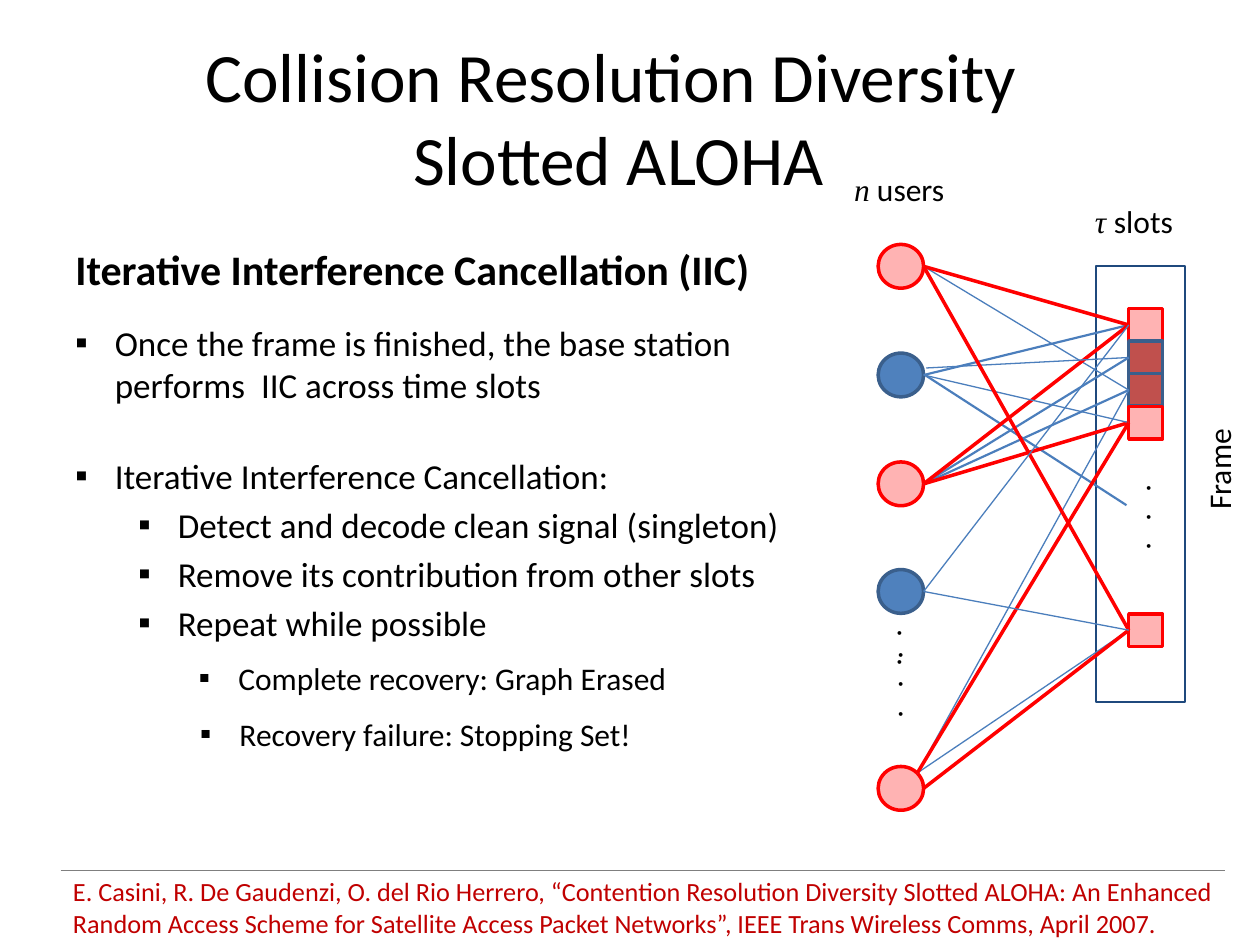
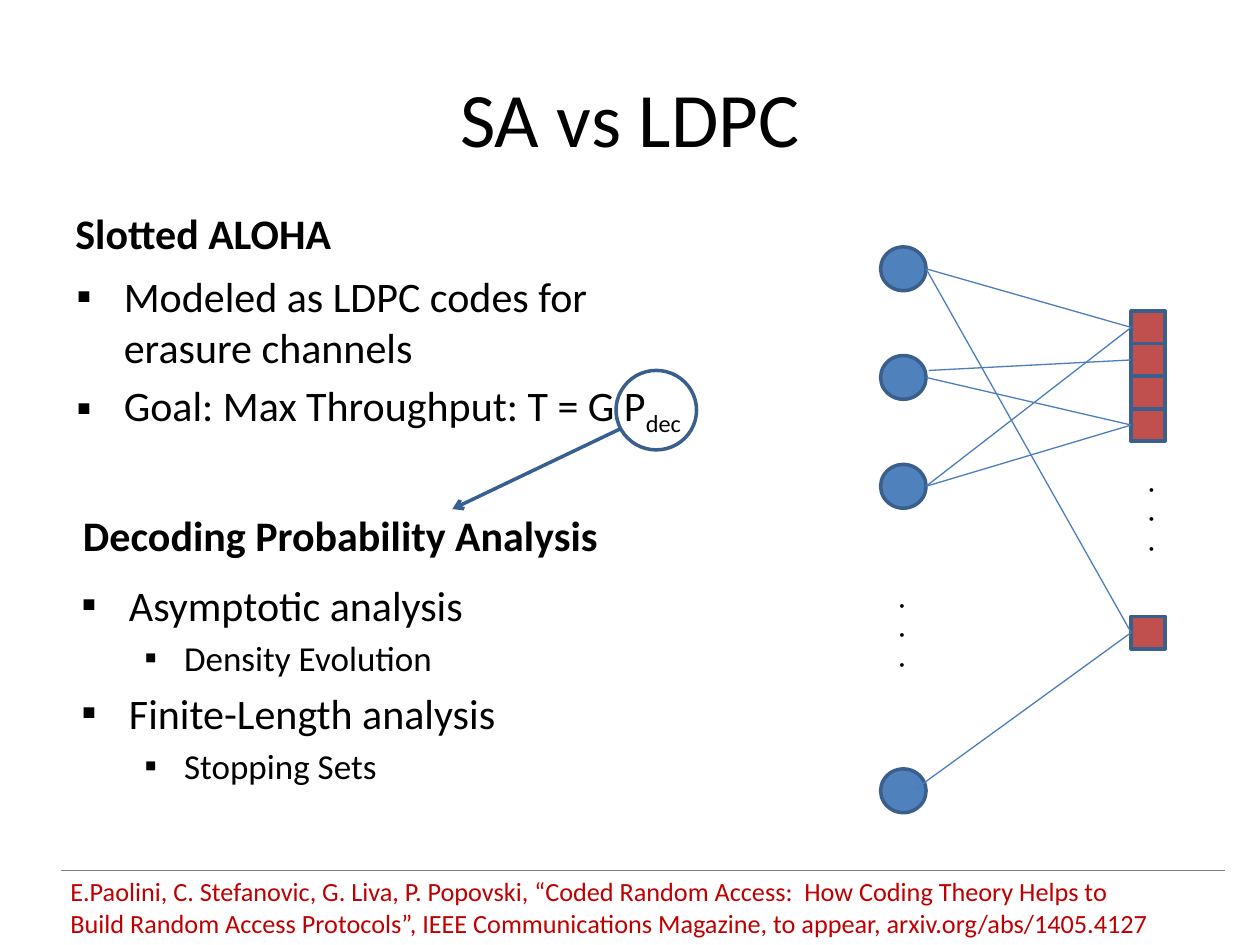
from pptx import Presentation
from pptx.dml.color import RGBColor
from pptx.enum.shapes import MSO_CONNECTOR, MSO_SHAPE
from pptx.enum.text import MSO_ANCHOR, PP_ALIGN
from pptx.oxml.ns import qn
from pptx.util import Pt
from lxml.etree import SubElement

# Colours
BLACK = RGBColor(0x00, 0x00, 0x00)
BLUE = RGBColor(0x4F, 0x81, 0xBD)
EDGE = RGBColor(0x3A, 0x5F, 0x8C)
LINK = RGBColor(0x4B, 0x7E, 0xBC)
NAVY = RGBColor(0x1F, 0x49, 0x7D)
ARROW = RGBColor(0x37, 0x60, 0x92)
BRICK = RGBColor(0xC0, 0x50, 0x4D)
RED = RGBColor(0xFF, 0x00, 0x00)
PINK = RGBColor(0xFF, 0xB3, 0xB3)
WINE = RGBColor(0xC0, 0x00, 0x00)
GREY = RGBColor(0x7F, 0x7F, 0x7F)

FONT, SERIF = "Calibri", "Times New Roman"

# Graph grid, in points
USER_X, USER_W, USER_H = 501.8, 26, 25
USER_Y = {1: 139.7, 2: 201.8, 3: 264, 4: 325.5, 5: 438}
SLOT_X, SLOT_W, SLOT_H = 645, 19.4, 18.6
SLOT_Y = {n: 176.4 + (n - 1) * SLOT_H for n in range(1, 5)} | {5: 350.8}


def write(par, text, size=18, color=BLACK, font=FONT, bold=False,
          italic=False, sub=False, gap=None):
    """Add text to a paragraph; a newline becomes a line break."""
    for num, part in enumerate(text.split("\n")):
        if num:
            par.add_line_break()
        run = par.add_run()
        run.text = part
        face = run.font
        face.name, face.size, face.bold, face.italic = font, Pt(size), bold, italic
        face.color.rgb = color
        props = run._r.get_or_add_rPr()
        if sub:
            props.set("baseline", "-25000")
        if gap:
            props.set("spc", str(int(gap * 100)))


class Deck:
    def __init__(self):
        self.prs = Presentation()
        self.prs.slide_width, self.prs.slide_height = Pt(720), Pt(540)
        self.page = None

    def start(self, title, left, size, note, note_x, note_w):
        """Open a slide with its title, footer rule and citation."""
        self.page = self.prs.slides.add_slide(self.prs.slide_layouts[6])
        frame = self.frame(left, 21.6, 648, 90, MSO_ANCHOR.MIDDLE)
        par = frame.paragraphs[0]
        par.alignment = PP_ALIGN.CENTER
        write(par, title, size=size)
        self.line(34.6, 497.5, 699.8, 497.5, GREY, 0.75)
        cite = self.frame(note_x, 496.8, note_w, 44)
        write(cite.paragraphs[0], note, size=15, color=WINE)

    def frame(self, x, y, w, h, anchor=MSO_ANCHOR.TOP, wrap=True, turn=0):
        box = self.page.shapes.add_textbox(Pt(x), Pt(y), Pt(w), Pt(h))
        box.rotation = turn
        frame = box.text_frame
        frame.word_wrap, frame.vertical_anchor = wrap, anchor
        return frame

    def label(self, x, y, w, h, *parts, turn=0):
        par = self.frame(x, y, w, h, wrap=False, turn=turn).paragraphs[0]
        for text, style in parts:
            write(par, text, **style)

    def dots(self, x, y):
        self.label(x, y, 58.3, 33, (". . .", {"gap": 4.05}), turn=90)

    def head(self, text, x, y, w):
        par = self.frame(x, y, w, 50.4, MSO_ANCHOR.BOTTOM).paragraphs[0]
        write(par, text, size=24, bold=True)

    def bullets(self, x, y, w, h, items, anchor=MSO_ANCHOR.TOP):
        """Items are (text, size, margin, hang, space before)."""
        frame = self.frame(x, y, w, h, anchor)
        for num, (text, size, margin, hang, space) in enumerate(items):
            par = frame.add_paragraph() if num else frame.paragraphs[0]
            par.space_before = Pt(space)
            props = par._p.get_or_add_pPr()
            props.set("marL", str(Pt(margin)))
            props.set("indent", str(-Pt(hang)))
            SubElement(props, qn("a:buFont")).set("typeface", FONT)
            SubElement(props, qn("a:buChar")).set("char", "▪")
            write(par, text, size=size)
        return frame

    def shape(self, kind, x, y, w, h, fill=None, edge=EDGE, width=2):
        item = self.page.shapes.add_shape(kind, Pt(x), Pt(y), Pt(w), Pt(h))
        item.shadow.inherit = False
        if fill is None:
            item.fill.background()
        else:
            item.fill.solid()
            item.fill.fore_color.rgb = fill
        item.line.color.rgb, item.line.width = edge, Pt(width)
        return item

    def line(self, x1, y1, x2, y2, color, width, slot=None, arrow=False):
        link = self.page.shapes.add_connector(
            MSO_CONNECTOR.STRAIGHT, Pt(x1), Pt(y1), Pt(x2), Pt(y2))
        link.line.color.rgb, link.line.width = color, Pt(width)
        if arrow:
            SubElement(link.line._get_or_add_ln(), qn("a:tailEnd")).set("type", "arrow")
        SubElement(link._element.spPr, qn("a:effectLst"))
        if slot is not None:
            link.end_connect(slot, 1)

    def graph(self, users, slots, links, shift=0, hot=((), ())):
        """Draw users, slots and links; the hot ones are red."""
        def paint(lit, base):
            return (PINK, RED) if lit else (base, EDGE)

        for n in users:
            self.shape(MSO_SHAPE.OVAL, USER_X + shift, USER_Y[n] + shift,
                       USER_W, USER_H, *paint(n in hot[0], BLUE))
        boxes = {n: self.shape(MSO_SHAPE.RECTANGLE, SLOT_X + shift, SLOT_Y[n] + shift,
                               SLOT_W, SLOT_H, *paint(n in hot[1], BRICK))
                 for n in slots}
        for user, slot, color, width, *move in links:
            dx, dy = move or (0, 0)
            self.line(USER_X + USER_W + shift + dx,
                      USER_Y[user] + USER_H / 2 + shift + dy,
                      SLOT_X + shift, SLOT_Y[slot] + SLOT_H / 2 + shift,
                      color, width, boxes[slot])


def cancel(deck):
    deck.start("Collision Resolution Diversity \nSlotted ALOHA", 29.5, 39.6,
               "E. Casini, R. De Gaudenzi, O. del Rio Herrero, “Contention Resolution "
               "Diversity Slotted ALOHA: An Enhanced Random Access Scheme for Satellite "
               "Access Packet Networks”, IEEE Trans Wireless Comms, April 2007.",
               34.6, 682.6)
    deck.head("Iterative Interference Cancellation (IIC)", 36, 121, 414.7)
    deck.bullets(36, 180, 454.3, 220.3, [
        ("Once the frame is finished, the base station performs  IIC across time slots",
         20, 22.5, 22.5, 4),
        ("Iterative Interference Cancellation:", 20, 22.5, 22.5, 28),
        ("Detect and decode clean signal (singleton)", 20, 58.5, 22.5, 4),
        ("Remove its contribution from other slots", 20, 58.5, 22.5, 4),
        ("Repeat while possible", 20, 58.5, 22.5, 4)])
    for text, x, y in (("Complete recovery: Graph Erased", 34.6, 360),
                       ("Recovery failure: Stopping Set!", 35.3, 391.7)):
        deck.bullets(x, y, 657.4, 41.8, [(text, 18, 94.5, 22.5, 3.6)],
                     MSO_ANCHOR.BOTTOM)

    # Frame of slots and labels
    deck.shape(MSO_SHAPE.RECTANGLE, 626.4, 152, 51, 249, edge=NAVY, width=1.25)
    math = {"font": SERIF, "italic": True}
    deck.label(481, 93.6, 69, 29, ("n", math), (" users", {}))
    deck.label(618.5, 111.6, 60, 29, ("τ ", math), ("slots", {}))
    deck.label(666, 253.4, 61, 29, ("Frame", {}), turn=270)
    for x, y in ((489, 348.5), (489.6, 378), (631.4, 282.2)):
        deck.dots(x, y)

    # Graph with the recovered part in red
    deck.line(527.8, 213.8, 643.7, 288.7, LINK, 1.25)
    thin, mid, hot = (LINK, 0.75), (LINK, 1.25), (RED, 2)
    low = (-3.6, -8.8)
    deck.graph(range(1, 6), range(1, 6), [
        (2, 1, *mid), (1, 1, *thin), (3, 3, *mid), (5, 5, *thin, *low),
        (1, 3, *thin), (3, 2, *mid), (5, 3, *thin, *low),
        (1, 1, *hot), (3, 1, *hot), (2, 2, *thin, 1.5, -4), (3, 4, *hot),
        (2, 4, *thin), (1, 5, *hot), (5, 5, *hot), (5, 4, *hot, *low),
        (4, 5, *thin), (4, 1, *thin)], hot=((1, 3, 5), (1, 4, 5)))


def codes(deck):
    deck.start("SA vs LDPC", 36, 44,
               "E.Paolini, C. Stefanovic, G. Liva, P. Popovski, “Coded Random Access:  "
               "How Coding Theory Helps to Build Random Access Protocols”, IEEE "
               "Communications Magazine, to appear, arxiv.org/abs/1405.4127",
               33.1, 632.9)
    deck.head("Slotted ALOHA", 36, 100.8, 318.2)
    goal = deck.bullets(36.7, 151.2, 391, 113, [
        ("Modeled as LDPC codes for \nerasure channels", 24, 27, 27, 4.8),
        ("Goal: Max Throughput: T = G P", 24, 27, 27, 4.8)])
    write(goal.paragraphs[1], "dec", size=24, sub=True)
    deck.head("Decoding Probability Analysis", 40.3, 272.9, 318.2)
    deck.bullets(39.6, 327.6, 318.2, 136.8, [
        ("Asymptotic analysis", 24, 27, 27, 4.8),
        ("Density Evolution", 20, 58.5, 22.5, 4),
        ("Finite-Length analysis", 24, 27, 27, 4.8),
        ("Stopping Sets", 20, 58.5, 22.5, 4)])

    # Graph
    for x, y in ((490.3, 350), (632.9, 283.7)):
        deck.dots(x, y)
    thin = (LINK, 0.75)
    deck.graph((1, 2, 3, 5), range(1, 6), [
        (1, 1, *thin), (3, 1, *thin), (2, 2, *thin, 1.5, -4), (3, 4, *thin),
        (2, 4, *thin), (1, 5, *thin), (5, 5, *thin, -6, -1)], shift=1.4)

    # Decoding probability callout
    deck.shape(MSO_SHAPE.OVAL, 352, 211.7, 46, 45.4)
    deck.line(355, 244.8, 258.5, 290.9, ARROW, 2, arrow=True)


def main():
    deck = Deck()
    cancel(deck)
    codes(deck)
    deck.prs.save("out.pptx")


if __name__ == "__main__":
    main()
